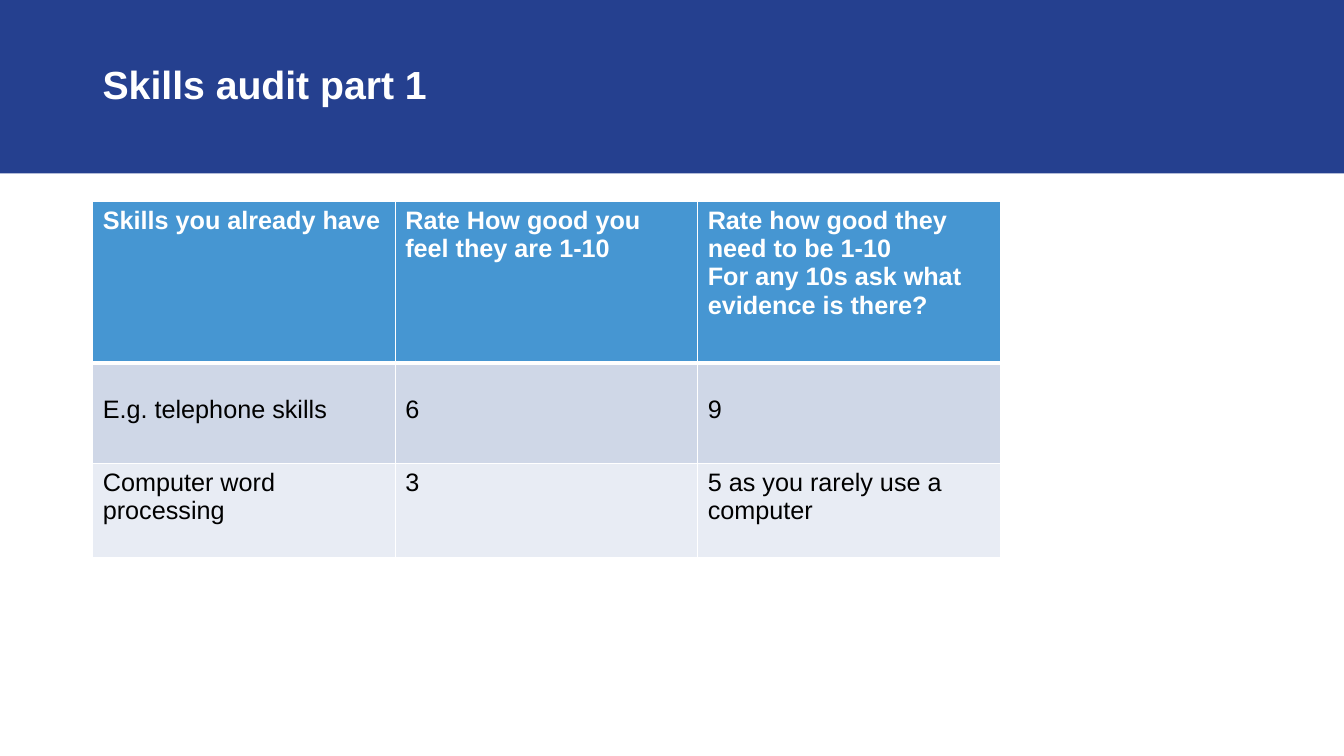
from lxml import etree
from pptx import Presentation
from pptx import util as u
from pptx.dml.color import RGBColor
from pptx.enum import shapes, text
from pptx.oxml import ns

COLOURS = {
    "banner": "25408F",
    "header": "4696D2",
    "band_dark": "CFD7E7",
    "band_light": "E8ECF4",
    "white": "FFFFFF",
    "black": "000000",
}
LEFT = 0.92
COLUMN_WIDTH = 3
ROW_HEIGHTS = [1.6, 1, 0.93]
ROW_FILLS = ["header", "band_dark", "band_light"]
TOP_MARGINS = [0.05, 0.33, 0.05]
SKILLS = [
    [
        "Skills you already have",
        "Rate How good you feel they are 1-10",
        "Rate how good they need to be 1-10\nFor any 10s ask what evidence is there?",
    ],
    ["E.g. telephone skills", "6", "9"],
    ["Computer word processing", "3", "5 as you rarely use a computer"],
]


def colour(name):
    return RGBColor.from_string(COLOURS[name])


class SlideBuilder:
    font_name = "Arial"

    def __init__(self, page):
        self.page = page

    def style(self, frame, size, colour_name, bold):
        for para in frame.paragraphs:
            para.font.name = self.font_name
            para.font.size = u.Pt(size)
            para.font.bold = bold
            para.font.color.rgb = colour(colour_name)

    def banner(self, width, height):
        bar = self.page.shapes.add_shape(
            shapes.MSO_SHAPE.RECTANGLE, 0, 0, u.Inches(width), u.Inches(height))
        bar.shadow.inherit = False
        bar.fill.solid()
        bar.fill.fore_color.rgb = colour("banner")
        bar.line.fill.background()

    def title(self, words, left, top, width, height):
        box = self.page.shapes.add_textbox(*map(u.Inches, (left, top, width, height)))
        frame = box.text_frame
        frame.word_wrap = True
        frame.vertical_anchor = text.MSO_ANCHOR.MIDDLE
        frame.text = words
        frame.paragraphs[0].line_spacing = 0.9
        self.style(frame, 28, "white", True)

    def border(self, cell, side, width):
        properties = cell._tc.get_or_add_tcPr()
        line = etree.SubElement(
            properties, ns.qn(f"a:ln{side}"), w=str(int(u.Pt(width))))
        fill = etree.SubElement(line, ns.qn("a:solidFill"))
        etree.SubElement(fill, ns.qn("a:srgbClr"), val=COLOURS["white"])

    def table(self, rows, left, top):
        columns = len(rows[0])
        table = self.page.shapes.add_table(
            len(rows), columns, u.Inches(left), u.Inches(top),
            u.Inches(COLUMN_WIDTH * columns), u.Inches(sum(ROW_HEIGHTS))).table
        for column in table.columns:
            column.width = u.Inches(COLUMN_WIDTH)
        for r, row in enumerate(rows):
            table.rows[r].height = u.Inches(ROW_HEIGHTS[r])
            is_header = r == 0
            for c, words in enumerate(row):
                cell = table.cell(r, c)
                cell.text = words
                cell.margin_top = u.Inches(TOP_MARGINS[r])
                self.style(cell.text_frame, 18,
                           "white" if is_header else "black", is_header)
                # A thick rule separates the header from the body
                self.border(cell, "L", 1)
                self.border(cell, "R", 1)
                self.border(cell, "T", 3 if r == 1 else 1)
                self.border(cell, "B", 3 if is_header else 1)
                cell.fill.solid()
                cell.fill.fore_color.rgb = colour(ROW_FILLS[r])


def main():
    deck = Presentation()
    deck.slide_width, deck.slide_height = u.Inches(13.33), u.Inches(7.5)
    builder = SlideBuilder(deck.slides.add_slide(deck.slide_layouts[6]))

    # Title banner
    builder.banner(13.33, 1.72)
    builder.title("Skills audit part 1", LEFT, 0.14, 11.5, 1.45)

    # Skills ratings
    builder.table(SKILLS, LEFT, 2)

    deck.save("out.pptx")


if __name__ == "__main__":
    main()
